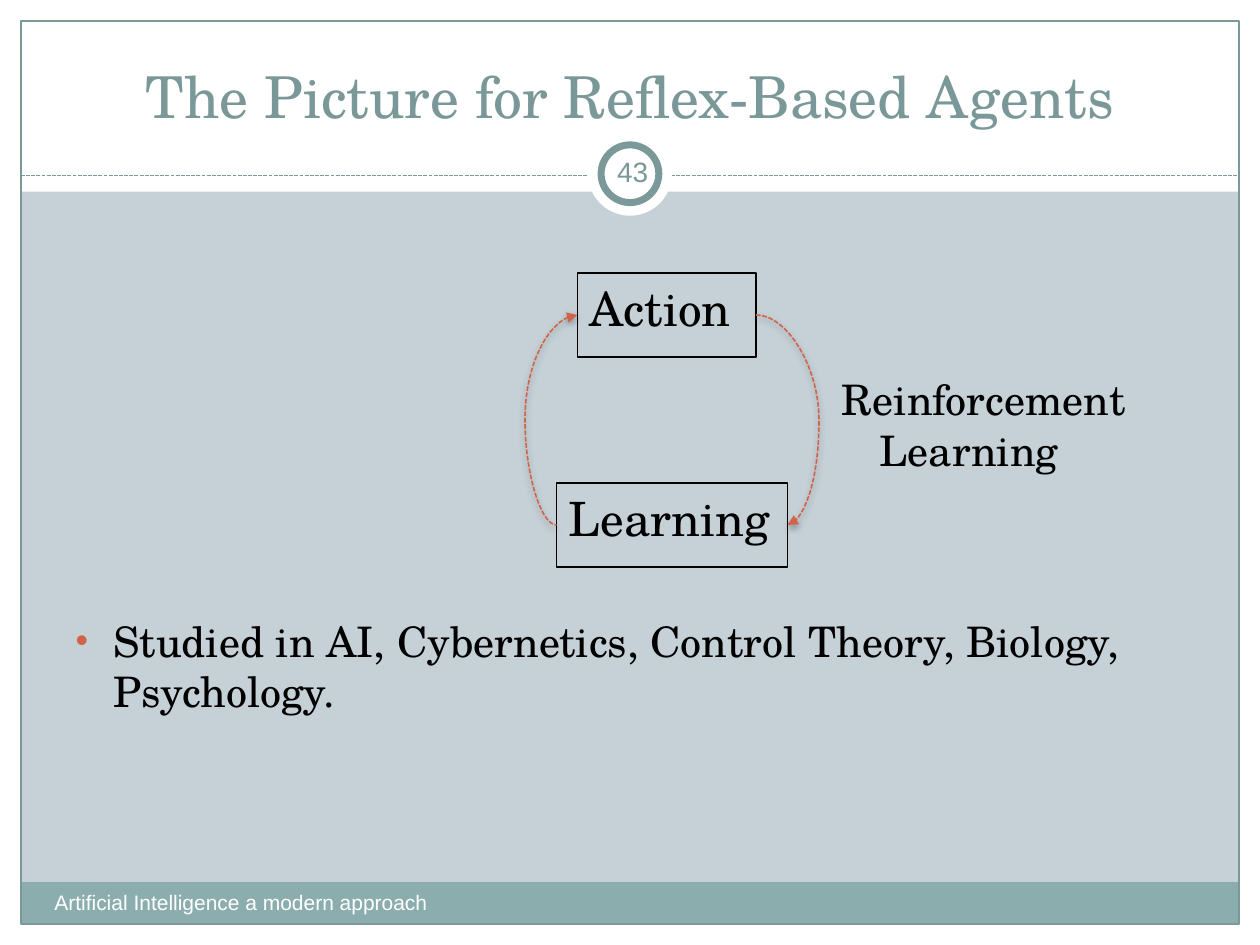
from lxml import etree
from pptx import Presentation
from pptx import util as u
from pptx.dml.color import RGBColor
from pptx.enum import dml, shapes, text
from pptx.oxml import ns

CELL = u.Inches(1) / 12  # the slide is a grid of 120 columns by 90 rows
COLS, ROWS = 120, 90
SERIF, SANS = "TeX Gyre Schola", "Arial"
WHITE = RGBColor(0xFF, 0xFF, 0xFF)
BLACK = RGBColor(0, 0, 0)
BACKGROUND = RGBColor(0xC5, 0xD1, 0xD7)
BAND = RGBColor(0x8C, 0xAD, 0xAE)
RULE = RGBColor(0x7C, 0x99, 0x9A)
HEADING = RGBColor(0x7B, 0x98, 0x99)
ACCENT = RGBColor(0xD1, 0x63, 0x49)


def emu(*cells):
    return [round(c * CELL) for c in cells]


def sub(parent, tag, **attrs):
    return etree.SubElement(parent, ns.qn(tag), attrs)


def place(sp, box):
    sp.left, sp.top, sp.width, sp.height = emu(*box)


def add_panel(s, kind, box, fill=None, line=None, width=0.75):
    sp = s.shapes.add_shape(kind, *emu(*box))
    sp.shadow.inherit = False
    if fill is None:
        sp.fill.background()
    else:
        sp.fill.solid()
        sp.fill.fore_color.rgb = fill
    if line is None:
        sp.line.fill.background()
    else:
        sp.line.color.rgb = line
        sp.line.width = u.Pt(width)
    return sp


def set_text(sp, words, size, font, color, align=text.PP_ALIGN.LEFT,
             anchor=text.MSO_ANCHOR.TOP):
    tf = sp.text_frame
    tf.text = words
    tf.word_wrap = True
    tf.auto_size = text.MSO_AUTO_SIZE.NONE
    tf.vertical_anchor = anchor
    p = tf.paragraphs[0]
    p.alignment = align
    f = p.runs[0].font
    f.size, f.name = u.Pt(size), font
    f.color.rgb = color
    return p


def set_body_text(sp, words, size, bullet=False):
    """Black serif text with a hanging indent and an optional bullet."""
    p = set_text(sp, words, size, SERIF, BLACK)
    p.space_before = u.Pt(0.2 * size)
    pPr = p._p.get_or_add_pPr()
    indent = u.Inches(0.3)
    pPr.set("marL", str(indent))
    pPr.set("indent", str(-indent))
    if bullet:
        sub(sub(pPr, "a:buClr"), "a:srgbClr", val=str(ACCENT))
        sub(pPr, "a:buSzPct", val="85000")
        sub(pPr, "a:buFont", typeface=SANS)
        sub(pPr, "a:buChar", char="•")
    else:
        sub(pPr, "a:buNone")


def style_line(line, color, width):
    line.color.rgb = color
    line.width = u.Pt(width)
    line.dash_style = dml.MSO_LINE.SQUARE_DOT
    line._ln.find(ns.qn("a:prstDash")).set("val", "sysDash")


def add_frame(s, margin=2, header=18.25, footer=4):
    """White margins, header, footer band and outline around the slide."""
    rect = shapes.MSO_SHAPE.RECTANGLE
    inner_w, inner_h = COLS - 2 * margin, ROWS - 2 * margin
    for box in ((0, ROWS - margin, COLS, margin), (0, 0, COLS, header),
                (0, 0, margin, ROWS), (COLS - margin, 0, margin, ROWS)):
        add_panel(s, rect, box, WHITE)
    add_panel(s, rect, (margin, ROWS - margin - footer, inner_w, footer), BAND)
    add_panel(s, rect, (margin, margin, inner_w, inner_h), line=RULE)

    y = header - 1.5
    c = s.shapes.add_connector(shapes.MSO_CONNECTOR.STRAIGHT,
                               *emu(margin, y, COLS - margin, y))
    style_line(c.line, RULE, 0.75)
    sub(c._element.spPr, "a:effectLst")


def add_page_badge(s, number, cx, cy):
    for size, line in ((8, None), (5.5, RULE)):
        add_panel(s, shapes.MSO_SHAPE.OVAL,
                  (cx - size / 2, cy - size / 2, size, size), WHITE, line, 4)
    tb = s.shapes.add_textbox(*emu(cx - 2.75, cy - 3.1, 6, 5.75))
    tf = tb.text_frame
    tf.margin_left = tf.margin_right = u.Inches(0.05)
    tf.margin_top = tf.margin_bottom = u.Inches(0.05)
    set_text(tb, number, 16, SANS, HEADING, text.PP_ALIGN.CENTER,
             text.MSO_ANCHOR.MIDDLE)


def add_loop_arrow(s, start, end, bulge, arrow_end):
    """Curve whose bulge is a multiple of its own width."""
    c = s.shapes.add_connector(shapes.MSO_CONNECTOR.CURVE, *emu(*start, *end))
    style_line(c.line, ACCENT, 0.9)
    sub(c.line._ln, arrow_end, type="triangle")
    spPr = c._element.spPr
    geom = spPr.find(ns.qn("a:prstGeom"))
    guides = geom.find(ns.qn("a:avLst"))
    if guides is None:
        guides = sub(geom, "a:avLst")
    sub(guides, "a:gd", name="adj1", fmla=f"val {round(bulge * 100000)}")
    shadow = sub(sub(spPr, "a:effectLst"), "a:outerShdw",
                 blurRad=str(u.Pt(4)), dist=str(u.Pt(2)), dir="5400000",
                 rotWithShape="0")
    sub(sub(shadow, "a:srgbClr", val=str(BLACK)), "a:alpha", val="35000")


def add_learning_loop(s, x, y):
    """Action and Learning boxes joined by two arrows, with a label."""
    row_gap, box_h = 20, 8
    action = (x + 2, y, 17, box_h)
    learning = (x, y + row_gap, 22, box_h)
    for words, box in (("Action", action), ("Learning", learning)):
        sp = add_panel(s, shapes.MSO_SHAPE.RECTANGLE, box, line=BLACK)
        set_body_text(sp, words, 27)
    label = s.shapes.add_textbox(*emu(x + 26, y + 9, 34, 14))
    set_body_text(label, "Reinforcement Learning", 24)

    top, bottom = y + box_h / 2, y + row_gap + box_h / 2
    add_loop_arrow(s, (action[0], top), (learning[0], bottom), 2.5, "a:headEnd")
    add_loop_arrow(s, (action[0] + action[2], top),
                   (learning[0] + learning[2], bottom), 2, "a:tailEnd")


def add_placeholder_text(s):
    title, body = s.shapes.title, s.placeholders[1]
    for sp, box in ((title, (4, 3, 112, 10)), (body, (6, 58, 110, 14))):
        place(sp, box)
        s.shapes._spTree.append(sp._element)  # in front of the panels
    set_text(title, "The Picture for Reflex-Based Agents", 33, SERIF, HEADING,
             text.PP_ALIGN.CENTER, text.MSO_ANCHOR.BOTTOM)
    set_body_text(body, "Studied in AI, Cybernetics, Control Theory, Biology, "
                  "Psychology.", 24, bullet=True)


def main():
    prs = Presentation()
    prs.slide_width, prs.slide_height = emu(COLS, ROWS)
    s = prs.slides.add_slide(prs.slide_layouts[1])
    s.background.fill.solid()
    s.background.fill.fore_color.rgb = BACKGROUND

    add_frame(s)
    add_page_badge(s, "43", COLS / 2, 16.55)
    add_placeholder_text(s)
    footer = s.shapes.add_textbox(*emu(4, 84.1, 47, 4.8))
    set_text(footer, "Artificial Intelligence a modern approach", 12, SANS, WHITE)
    add_learning_loop(s, 53, 26)
    prs.save("out.pptx")


if __name__ == "__main__":
    main()
